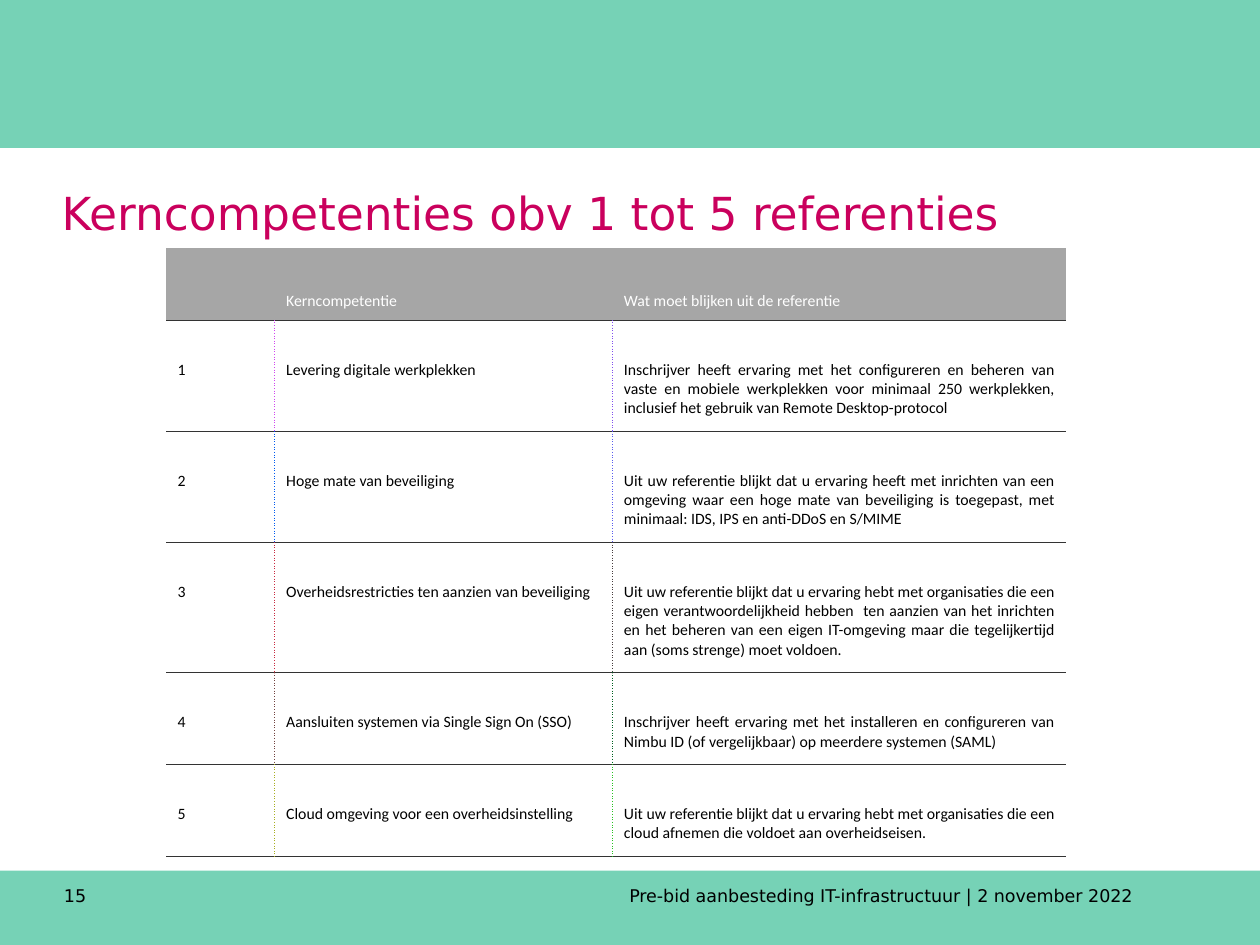
from dataclasses import dataclass
from typing import Optional

from lxml.etree import SubElement
from pptx import Presentation
from pptx.dml.color import RGBColor
from pptx.enum.shapes import MSO_SHAPE as Shape
from pptx.enum.text import MSO_ANCHOR as Anchor, PP_ALIGN as Align
from pptx.oxml.ns import qn
from pptx.util import Pt

MINT = RGBColor(0x76, 0xD2, 0xB6)
MAGENTA = RGBColor(0xCA, 0x00, 0x5D)
GREY = RGBColor(0xA6, 0xA6, 0xA6)
DARK = RGBColor(0x33, 0x33, 0x33)
BLACK = RGBColor(0x00, 0x00, 0x00)
WHITE = RGBColor(0xFF, 0xFF, 0xFF)

SANS = "DejaVu Sans"
BODY = "Calibri"
WIDTH, HEIGHT = 720, 540


@dataclass
class Box:
    left: float
    top: float
    width: float
    height: float

    def lengths(self) -> tuple:
        return Pt(self.left), Pt(self.top), Pt(self.width), Pt(self.height)


@dataclass
class Border:
    color: RGBColor
    dash: str = "solid"


@dataclass
class Competence:
    name: str
    proof: str
    height: float
    first_rule: str
    second_rule: str


HEADER = ("", "Kerncompetentie", "Wat moet blijken uit de referentie")
HEADER_HEIGHT = 41
COLUMNS = (62, 193, 259)
COMPETENCES = [
    Competence(
        "Levering digitale werkplekken",
        "Inschrijver heeft ervaring met het configureren en beheren van vaste en "
        "mobiele werkplekken voor minimaal 250 werkplekken, inclusief het gebruik "
        "van Remote Desktop-protocol",
        63.5, "D047EF", "804FEF"),
    Competence(
        "Hoge mate van beveiliging",
        "Uit uw referentie blijkt dat u ervaring heeft met inrichten van een "
        "omgeving waar een hoge mate van beveiliging is toegepast, met minimaal: "
        "IDS, IPS en anti-DDoS en S/MIME",
        63.5, "005AEF", "585CEF"),
    Competence(
        "Overheidsrestricties ten aanzien van beveiliging",
        "Uit uw referentie blijkt dat u ervaring hebt met organisaties die een "
        "eigen verantwoordelijkheid hebben  ten aanzien van het inrichten en het "
        "beheren van een eigen IT-omgeving maar die tegelijkertijd aan (soms "
        "strenge) moet voldoen.",
        74.5, "C8293F", "483D3F"),
    Competence(
        "Aansluiten systemen via Single Sign On (SSO)",
        "Inschrijver heeft ervaring met het installeren en configureren van "
        "Nimbu ID (of vergelijkbaar) op meerdere systemen (SAML)",
        52.5, "70423F", "006021"),
    Competence(
        "Cloud omgeving voor een overheidsinstelling",
        "Uit uw referentie blijkt dat u ervaring hebt met organisaties die een "
        "cloud afnemen die voldoet aan overheidseisen.",
        52.5, "A8AE21", "28C221"),
]


def add_run(p, text: str, size: float, font: str, color: RGBColor) -> None:
    r = p.add_run()
    r.text = text
    r.font.size = Pt(size)
    r.font.name = font
    r.font.bold = False
    r.font.color.rgb = color


def add_bar(s, box: Box) -> None:
    sp = s.shapes.add_shape(Shape.RECTANGLE, *box.lengths())
    sp.shadow.inherit = False
    sp.fill.solid()
    sp.fill.fore_color.rgb = MINT
    sp.line.fill.background()


def add_label(s, box: Box, text: str) -> None:
    tf = s.shapes.add_textbox(*box.lengths()).text_frame
    tf.word_wrap = True
    add_run(tf.paragraphs[0], text, 10, SANS, BLACK)


def set_title(s, box: Box, text: str) -> None:
    sp = s.shapes.title
    sp.left, sp.top, sp.width, sp.height = box.lengths()
    tf = sp.text_frame
    tf.vertical_anchor = Anchor.MIDDLE
    p = tf.paragraphs[0]
    p.alignment = Align.LEFT
    add_run(p, text, 26, SANS, MAGENTA)


def set_borders(cell, left: Optional[Border] = None, right: Optional[Border] = None,
                top: Optional[Border] = None, bottom: Optional[Border] = None) -> None:
    tc_pr = cell._tc.get_or_add_tcPr()
    for side, border in zip("LRTB", (left, right, top, bottom)):
        ln = SubElement(tc_pr, qn(f"a:ln{side}"), w=str(Pt(0.6)))
        if border is None:
            SubElement(ln, qn("a:noFill"))
            continue
        fill = SubElement(ln, qn("a:solidFill"))
        SubElement(fill, qn("a:srgbClr"), val=str(border.color))
        SubElement(ln, qn("a:prstDash"), val=border.dash)


def fill_cell(cell, text: str, color: RGBColor) -> None:
    cell.margin_left = cell.margin_right = Pt(6.6)
    cell.margin_top, cell.margin_bottom = Pt(23), Pt(3.6)
    p = cell.text_frame.paragraphs[0]
    p.alignment = Align.JUSTIFY
    if text:
        add_run(p, text, 9, BODY, color)
    else:
        p.font.size = Pt(9)


def add_competence_table(s, left: float, top: float) -> None:
    heights = [HEADER_HEIGHT] + [c.height for c in COMPETENCES]
    box = Box(left, top, sum(COLUMNS), sum(heights))
    table = s.shapes.add_table(len(heights), len(COLUMNS), *box.lengths()).table
    for column, width in zip(table.columns, COLUMNS):
        column.width = Pt(width)
    for row, height in zip(table.rows, heights):
        row.height = Pt(height)

    rule = Border(DARK)
    for i, text in enumerate(HEADER):
        cell = table.cell(0, i)
        fill_cell(cell, text, WHITE)
        cell.vertical_anchor = Anchor.MIDDLE
        set_borders(cell, bottom=rule)
        cell.fill.solid()
        cell.fill.fore_color.rgb = GREY

    for n, item in enumerate(COMPETENCES, 1):
        dots = [Border(RGBColor.from_string(c), "dot")
                for c in (item.first_rule, item.second_rule)]
        edges = [None, *dots, None]
        for i, text in enumerate((str(n), item.name, item.proof)):
            cell = table.cell(n, i)
            fill_cell(cell, text, BLACK)
            set_borders(cell, edges[i], edges[i + 1], rule, rule)
            cell.fill.background()


def main() -> None:
    prs = Presentation()
    prs.slide_width, prs.slide_height = Pt(WIDTH), Pt(HEIGHT)
    s = prs.slides.add_slide(prs.slide_layouts[5])
    add_bar(s, Box(0, 0, WIDTH, 84.5))
    add_bar(s, Box(0, 497.5, WIDTH, 42.5))
    add_label(s, Box(352.5, 502, 328, 28),
              "Pre-bid aanbesteding IT-infrastructuur | 2 november 2022")
    set_title(s, Box(28, 99, 648, 45), "Kerncompetenties obv 1 tot 5 referenties")
    add_label(s, Box(29.5, 502, 56, 28), "15")
    add_competence_table(s, 95, 142)
    prs.save("out.pptx")


if __name__ == "__main__":
    main()
